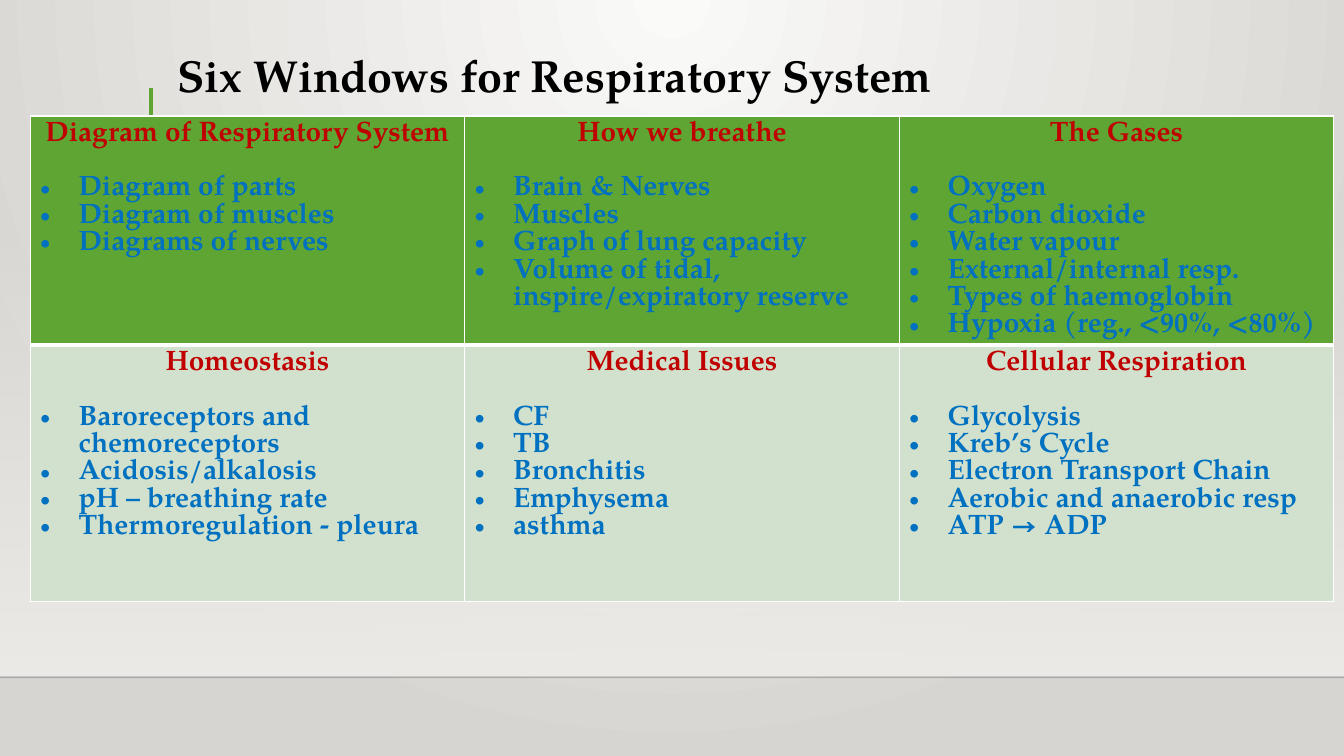
from lxml.etree import SubElement
from pptx import Presentation
from pptx.dml.color import RGBColor
from pptx.enum.shapes import MSO_CONNECTOR as CONNECTOR, MSO_SHAPE as SHAPE
from pptx.enum.text import MSO_ANCHOR as ANCHOR, PP_ALIGN as ALIGN
from pptx.oxml import parse_xml
from pptx.oxml.ns import nsdecls, qn
from pptx.util import Inches, Pt

FONT = "TeX Gyre Pagella"
COLORS = {
    "title": "000000", "heading": "C00000", "topic": "0070C0",
    "green": "5FA534", "pale": "D2E1CE", "border": "FFFFFF",
    "glow": "FAFAF9", "wall": "D7D5D2", "floor": "EDEBE7", "edge": "000001",
}
WINDOWS = [
    [
        ("Diagram of Respiratory System",
         ["Diagram of parts", "Diagram of muscles", "Diagrams of nerves"]),
        ("How we breathe",
         ["Brain & Nerves", "Muscles", "Graph of lung capacity",
          "Volume of tidal, inspire/expiratory reserve"]),
        ("The Gases",
         ["Oxygen", "Carbon dioxide", "Water vapour", "External/internal resp.",
          "Types of haemoglobin", "Hypoxia (reg., <90%, <80%)"]),
    ],
    [
        ("Homeostasis",
         ["Baroreceptors and chemoreceptors", "Acidosis/alkalosis",
          "pH – breathing rate", "Thermoregulation - pleura"]),
        ("Medical Issues",
         ["CF", "TB", "Bronchitis", "Emphysema", "asthma"]),
        ("Cellular Respiration",
         ["Glycolysis", "Kreb’s Cycle", "Electron Transport Chain",
          "Aerobic and anaerobic resp", "ATP → ADP"]),
    ],
]
ROW_HEIGHTS = [2.27, 2.54]
ROW_FILLS = ["green", "pale"]


def rgb(name):
    return RGBColor.from_string(COLORS[name])


def write(paragraph, text, *, size=20, color="topic", align=ALIGN.LEFT,
          bullet=False, before=0, spacing=None):
    if bullet:
        props = paragraph._p.get_or_add_pPr()
        props.set("marL", str(Inches(0.38)))
        props.set("indent", str(-Inches(0.38)))
        SubElement(props, qn("a:buFont"), typeface="Arial")
        SubElement(props, qn("a:buChar"), char="•")
    paragraph.alignment = align
    if before:
        paragraph.space_before = Pt(before)
    if spacing:
        paragraph.line_spacing = spacing
    run = paragraph.add_run()
    run.text = text
    run.font.name, run.font.size, run.font.bold = FONT, Pt(size), True
    run.font.color.rgb = rgb(color)


def set_gradient(parent, stops, direction):
    """Replace the gradient under parent; stops are (position, colour, opacity) in percent."""
    stop_xml = "".join(
        f'<a:gs pos="{pos * 1000}"><a:srgbClr val="{COLORS[color]}">'
        f'<a:alpha val="{opacity * 1000}"/></a:srgbClr></a:gs>'
        for pos, color, opacity in stops)
    old = next(parent.iter(qn("a:gradFill")))
    old.getparent().replace(old, parse_xml(
        f'<a:gradFill {nsdecls("a")} rotWithShape="1"><a:gsLst>{stop_xml}</a:gsLst>'
        f'{direction}</a:gradFill>'))


def add_line(slide, x1, y1, x2, y2, color, width, opacity=100):
    line = slide.shapes.add_connector(
        CONNECTOR.STRAIGHT, Inches(x1), Inches(y1), Inches(x2), Inches(y2))
    line.line.color.rgb = rgb(color)
    line.line.width = Pt(width)
    props = line._element.spPr
    if opacity < 100:
        SubElement(next(props.iter(qn("a:srgbClr"))), qn("a:alpha"), val=str(opacity * 1000))
    SubElement(props, qn("a:effectLst"))


def add_backdrop(slide):
    slide.background.fill.gradient()
    set_gradient(slide._element, [(0, "glow", 100), (100, "wall", 100)],
                 '<a:path path="circle"><a:fillToRect l="43000" r="43000" b="100000"/></a:path>')
    floor = slide.shapes.add_shape(
        SHAPE.RECTANGLE, 0, Inches(2.2), Inches(13.33), Inches(4.5))
    floor.shadow.inherit = False
    floor.line.fill.background()
    floor.fill.gradient()
    set_gradient(floor._element, [(0, "floor", 0), (100, "floor", 100)],
                 '<a:lin ang="5400000" scaled="0"/>')
    add_line(slide, 0, 6.72, 13.33, 6.72, "edge", 1, opacity=20)
    add_line(slide, 1.5, 0.87, 1.5, 2.04, "green", 3)


def add_title(slide, text):
    title = slide.shapes.title
    title.left, title.top = Inches(1.66), Inches(-0.09)
    title.width, title.height = Inches(10.41), Inches(1.15)
    title.text_frame.vertical_anchor = ANCHOR.BOTTOM
    write(title.text_frame.paragraphs[0], text, size=32, color="title", spacing=0.9)


def set_borders(cell, **widths):
    props = cell._tc.get_or_add_tcPr()
    for side in "LRTB":
        border = SubElement(props, qn(f"a:ln{side}"), w=str(Pt(widths.get(side, 1))))
        fill = SubElement(border, qn("a:solidFill"))
        SubElement(fill, qn("a:srgbClr"), val=COLORS["border"])


def fill_window(cell, heading, topics):
    frame = cell.text_frame
    write(frame.paragraphs[0], heading, color="heading", align=ALIGN.CENTER)
    for index, topic in enumerate(topics):
        write(frame.add_paragraph(), topic, bullet=True, before=0 if index else 19.6)


def add_windows(slide):
    table = slide.shapes.add_table(
        len(WINDOWS), len(WINDOWS[0]), Inches(0.3), Inches(1.15),
        Inches(12.93), Inches(sum(ROW_HEIGHTS))).table
    table.first_row = table.horz_banding = False
    for r, windows in enumerate(WINDOWS):
        table.rows[r].height = Inches(ROW_HEIGHTS[r])
        for c, (heading, topics) in enumerate(windows):
            cell = table.cell(r, c)
            set_borders(cell, **({"T": 3} if r else {"B": 3}))
            cell.fill.solid()
            cell.fill.fore_color.rgb = rgb(ROW_FILLS[r])
            fill_window(cell, heading, topics)


def main():
    deck = Presentation()
    deck.slide_width, deck.slide_height = Inches(13.33), Inches(7.5)
    slide = deck.slides.add_slide(deck.slide_layouts[5])
    add_backdrop(slide)
    add_title(slide, "Six Windows for Respiratory System")
    add_windows(slide)
    deck.save("out.pptx")


if __name__ == "__main__":
    main()
